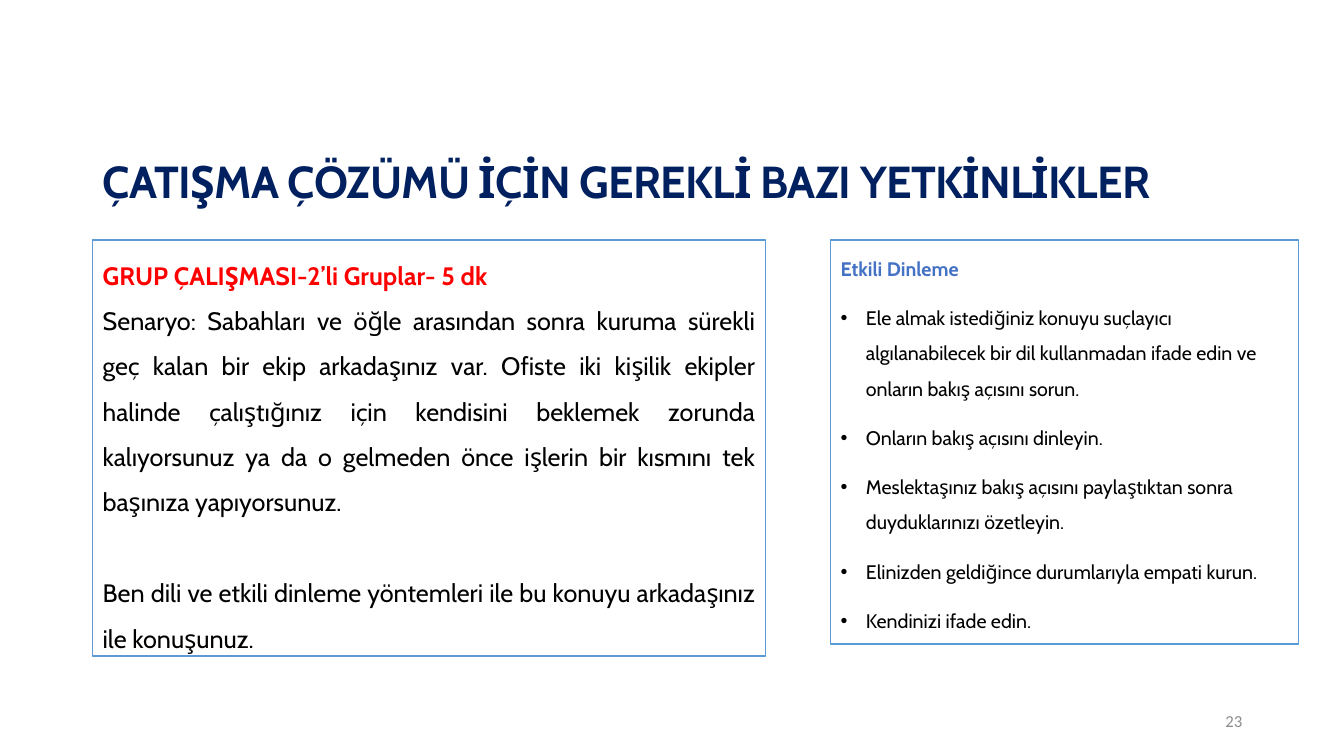
from pptx import Presentation
from pptx.dml.color import RGBColor
from pptx.enum.shapes import MSO_SHAPE as Shape
from pptx.enum.text import MSO_ANCHOR as Anchor, MSO_AUTO_SIZE as Fit, PP_ALIGN as Align
from pptx.oxml.ns import qn
from pptx.util import Inches, Pt
from lxml import etree

NAVY, BLUE, EDGE, RED = "002060", "4472C4", "5B9BD5", "FF0000"
BLACK, WHITE, GREY = "000000", "FFFFFF", "8C8C8C"
LEFT, TOP = 0.92, 2.38

TASK = [
    "Senaryo: Sabahları ve öğle arasından sonra kuruma sürekli geç kalan bir ekip "
    "arkadaşınız var. Ofiste iki kişilik ekipler halinde çalıştığınız için kendisini "
    "beklemek zorunda kalıyorsunuz ya da o gelmeden önce işlerin bir kısmını tek "
    "başınıza yapıyorsunuz.",
    "Ben dili ve etkili dinleme yöntemleri ile bu konuyu arkadaşınız ile konuşunuz.",
]
STEPS = [
    "Ele almak istediğiniz konuyu suçlayıcı algılanabilecek bir dil kullanmadan "
    "ifade edin ve onların bakış açısını sorun.",
    "Onların bakış açısını dinleyin.",
    "Meslektaşınız bakış açısını paylaştıktan sonra duyduklarınızı özetleyin.",
    "Elinizden geldiğince durumlarıyla empati kurun.",
    "Kendinizi ifade edin.",
]


def color(code):
    return RGBColor.from_string(code)


class Page:
    font = "Cabin"

    def __init__(self, deck):
        self.slide = deck.slides.add_slide(deck.slide_layouts[5])

    def run(self, para, text, size, code, bold=False, font=None):
        run = para.add_run()
        run.text = text
        run.font.name = font or self.font
        run.font.size = Pt(size)
        run.font.bold = bold
        run.font.color.rgb = color(code)
        return run

    def title(self, text, x, y, w, h):
        head = self.slide.shapes.title
        head.left, head.top, head.width, head.height = map(Inches, (x, y, w, h))
        frame = head.text_frame
        frame.word_wrap = True
        frame.auto_size = Fit.NONE
        frame.vertical_anchor = Anchor.MIDDLE
        para = frame.paragraphs[0]
        para.alignment = Align.LEFT
        para.line_spacing = 0.9
        run = self.run(para, text, 32, NAVY, True)
        run.font._element.set("spc", "-50")

    def panel(self, x, y, w, h, fit=Fit.NONE):
        box = self.slide.shapes.add_shape(Shape.RECTANGLE, *map(Inches, (x, y, w, h)))
        box.shadow.inherit = False
        box.fill.solid()
        box.fill.fore_color.rgb = color(WHITE)
        box.line.color.rgb = color(EDGE)
        box.line.width = Pt(1)
        frame = box.text_frame
        frame.word_wrap = True
        frame.auto_size = fit
        frame.vertical_anchor = Anchor.TOP
        return frame

    def para(self, frame, text, size, code, bold=False, align=Align.LEFT, gap=0, dot=False):
        """Fill the empty first paragraph, or add one after a gap in points."""
        first = frame.paragraphs[0]
        para = frame.add_paragraph() if first.runs else first
        para.alignment = align
        para.line_spacing = 1.5
        para.space_before = Pt(gap)
        if dot:
            props = para._p.get_or_add_pPr()
            props.set("marL", str(Inches(0.25)))
            props.set("indent", str(-Inches(0.25)))
            etree.SubElement(props, qn("a:buFont")).set("typeface", "Arial")
            etree.SubElement(props, qn("a:buChar")).set("char", "•")
        self.run(para, text, size, code, bold)

    def number(self, text, x, y, w, h):
        frame = self.slide.shapes.add_textbox(*map(Inches, (x, y, w, h))).text_frame
        frame.word_wrap = True
        frame.vertical_anchor = Anchor.MIDDLE
        para = frame.paragraphs[0]
        para.alignment = Align.RIGHT
        self.run(para, text, 12, GREY, font="Calibri")


def main():
    deck = Presentation()
    deck.slide_width, deck.slide_height = Inches(13.33), Inches(7.5)
    page = Page(deck)
    page.title("ÇATIŞMA ÇÖZÜMÜ İÇİN GEREKLİ BAZI YETKİNLİKLER", LEFT, 1.1, 11.5, 1.45)

    skill = page.panel(8.24, TOP, 4.64, 4.01)
    page.para(skill, "Etkili Dinleme", 14, BLUE, True)
    for step in STEPS:
        page.para(skill, step, 14, BLACK, gap=10, dot=True)

    page.number("23", 9.42, 6.95, 3, 0.4)

    group = page.panel(LEFT, TOP, 6.67, 4.13, Fit.SHAPE_TO_FIT_TEXT)
    page.para(group, "GRUP ÇALIŞMASI-2’li Gruplar- 5 dk", 18, RED, True, Align.JUSTIFY)
    for text, gap in zip(TASK, (0, 32.4)):
        page.para(group, text, 18, BLACK, align=Align.JUSTIFY, gap=gap)

    deck.save("out.pptx")


if __name__ == "__main__":
    main()
